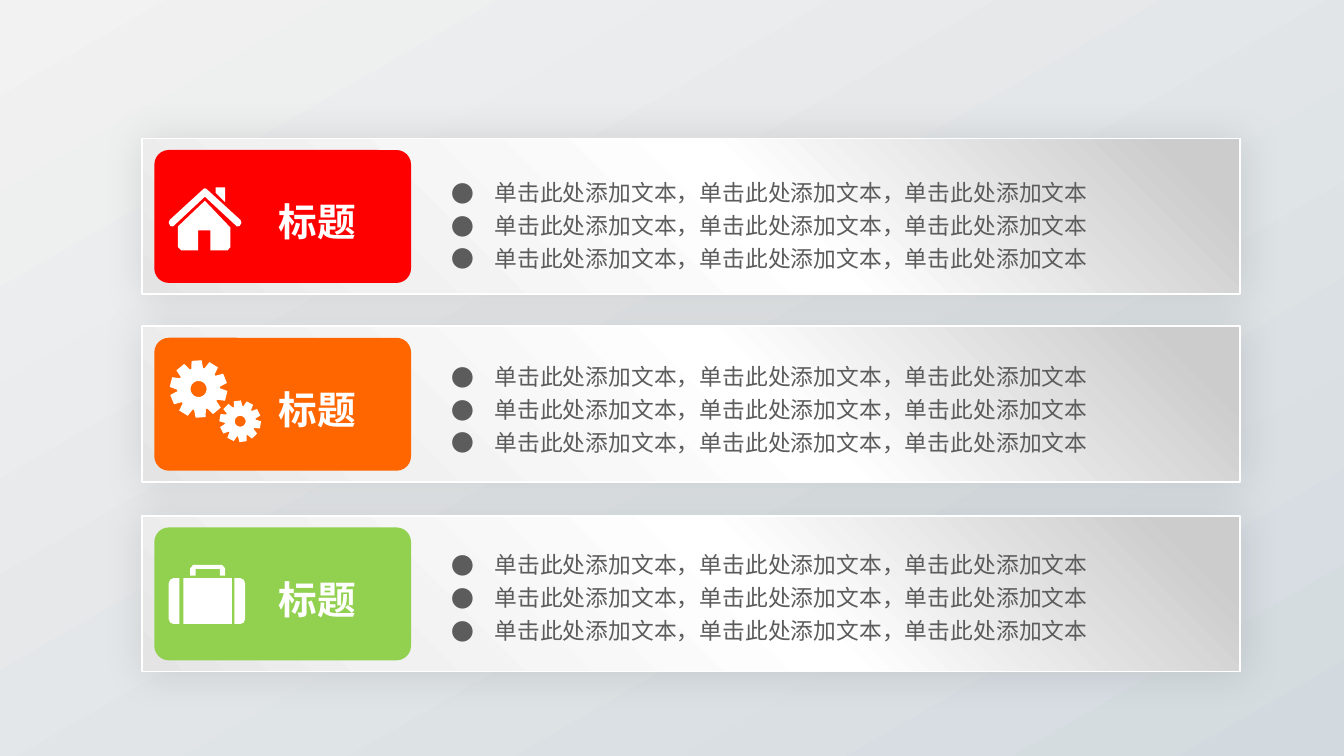
import math
from dataclasses import dataclass

import lxml.etree
import pptx
import pptx.dml.color
import pptx.enum.shapes
import pptx.enum.text
import pptx.oxml
import pptx.oxml.ns
import pptx.util

Pt = pptx.util.Pt
qn = pptx.oxml.ns.qn
rgb = pptx.dml.color.RGBColor.from_string


@dataclass(frozen=True)
class Theme:
    font: str = "Noto Sans CJK SC"
    white: str = "FFFFFF"
    body: str = "5C5C5C"
    red: str = "FF0000"
    orange: str = "FF6600"
    green: str = "92D050"
    shadow: str = "000000"
    background: tuple = ("F2F2F2", "D3DADF")
    card: tuple = ((6, "CCCCCC"), (43, "FFFFFF"), (80, "F1F1F1"), (100, "E4E4E4"))
    heading_size: float = 20.7
    body_size: float = 12.2


def child(parent, tag, **attributes):
    return lxml.etree.SubElement(parent, qn(tag), {k: str(v) for k, v in attributes.items()})


def write_text(tf, text, *, font, size, color, bold=False, align=None, bullet=None, indent=23):
    for i, line in enumerate(text.split("\n")):
        p = tf.paragraphs[0] if i == 0 else tf.add_paragraph()
        if bullet:
            pPr = p._p.get_or_add_pPr()
            pPr.set("marL", str(Pt(indent)))
            pPr.set("indent", str(-Pt(indent)))
            child(pPr, "a:buFont", typeface=font)
            child(pPr, "a:buChar", char=bullet)
        p.alignment = align
        p.line_spacing = 1.2
        p.space_before = p.space_after = Pt(0)
        r = p.add_run()
        r.text = line
        r.font.size = Pt(size)
        r.font.bold = bold
        r.font.color.rgb = rgb(color)
        r.font.name = font
        child(r._r.get_or_add_rPr(), "a:ea", typeface=font)


def gear(cx, cy, radius, hole, turn, teeth=10):
    step = 360 / teeth
    profile = ((-16, 0.74), (-10, 1), (10, 1), (16, 0.74))

    def polar(angle, r):
        a = math.radians(angle)
        return cx + r * math.cos(a), cy + r * math.sin(a)

    rim = [polar(turn + step * i + a, radius * k) for i in range(teeth) for a, k in profile]
    return [rim, [polar(15 * i, hole) for i in range(24)]]


def house():
    chimney = [(25.2, 2.9), (25.2, 0), (30.2, 0), (30.2, 7.9)]
    roof = [(18.6, 0.9), (19.4, 0.5), (20.3, 0.9), (38.5, 17.5), (39, 19), (38, 20.8),
            (36.5, 20.9), (19.4, 5), (2.4, 20.9), (0.9, 20.8), (0, 19), (0.5, 17.5)]
    walls = [(5, 20.9), (5, 32), (6.8, 33.8), (15.8, 33.8), (15.8, 23), (22.3, 23),
             (22.3, 33.8), (31.5, 33.8), (33.1, 32), (33.1, 21.6), (19.4, 7.2)]
    return [chimney, roof, walls]


def gears():
    return gear(16, 7.4, 15.5, 4.3, -94) + gear(38.3, 24.7, 11.2, 2.9, -98)


def suitcase(width=41):
    handle = [(11.5, 5.8), (11.5, 2), (13.2, 0), (28.6, 0), (30.3, 2),
              (30.3, 5.8), (27.4, 5.8), (27.4, 2.2), (14.4, 2.2), (14.4, 5.8)]
    side = [(5.8, 7.2), (5.8, 31.7), (2.5, 31.7), (0.8, 31), (0, 29), (0, 10), (0.8, 8), (2.5, 7.2)]
    trunk = [(7.9, 7.2), (33.8, 7.2), (33.8, 31.7), (7.9, 31.7)]
    return [handle, side, trunk, [(width - x, y) for x, y in side]]


class Deck:
    """Holds the theme and the current slide, and adds each kind of element."""

    def __init__(self, prs, theme):
        self.theme = theme
        self.s = prs.slides.add_slide(prs.slide_layouts[4])
        self.bodies = [sp for sp in self.s.placeholders if sp.placeholder_format.idx > 0]

    def background(self):
        fill = self.s.background.fill
        fill.gradient()
        fill.gradient_angle = 300
        for stop, color in zip(fill.gradient_stops, self.theme.background):
            stop.color.rgb = rgb(color)

    def box(self, x, y, w, h, corner):
        kind = pptx.enum.shapes.MSO_SHAPE.ROUNDED_RECTANGLE
        sp = self.s.shapes.add_shape(kind, Pt(x), Pt(y), Pt(w), Pt(h))
        sp.adjustments[0] = corner
        sp.shadow.inherit = False
        return sp

    def card(self, x, y, w, h):
        sp = self.box(x, y, w, h, 0)
        sp.line.color.rgb = rgb(self.theme.white)
        sp.line.width = Pt(1)
        spPr = sp._element.spPr
        grad = pptx.oxml.parse_xml(f'<a:gradFill {pptx.oxml.ns.nsdecls("a")} rotWithShape="1"/>')
        stops = child(grad, "a:gsLst")
        for position, color in self.theme.card:
            child(child(stops, "a:gs", pos=position * 1000), "a:srgbClr", val=color)
        child(grad, "a:lin", ang=135 * 60000, scaled=0)
        spPr.find(qn("a:prstGeom")).addnext(grad)
        glow = child(spPr.find(qn("a:effectLst")), "a:outerShdw", blurRad=Pt(22), dist=0, dir=0,
                     algn="ctr", rotWithShape=0)
        child(child(glow, "a:srgbClr", val=self.theme.shadow), "a:alpha", val=11000)

    def tab(self, x, y, w, h, color):
        sp = self.box(x, y, w, h, 0.109)
        sp.fill.solid()
        sp.fill.fore_color.rgb = rgb(color)
        sp.line.fill.background()

    def icon(self, x, y, contours):
        builder = None
        for contour in contours:
            start, *rest = [(Pt(x + px), Pt(y + py)) for px, py in contour]
            if builder is None:
                builder = self.s.shapes.build_freeform(*start)
            else:
                builder.move_to(*start)
            builder.add_line_segments(rest, close=True)
        sp = builder.convert_to_shape()
        sp.shadow.inherit = False
        sp.fill.solid()
        sp.fill.fore_color.rgb = rgb(self.theme.white)
        sp.line.fill.background()

    def frame(self, sp, margin_x, margin_y):
        tf = sp.text_frame
        tf.word_wrap = True
        tf.auto_size = pptx.enum.text.MSO_AUTO_SIZE.SHAPE_TO_FIT_TEXT
        tf.vertical_anchor = pptx.enum.text.MSO_ANCHOR.TOP
        tf.margin_left = tf.margin_right = Pt(margin_x)
        tf.margin_top = tf.margin_bottom = Pt(margin_y)
        return tf

    def heading(self, x, y, w, h, text):
        sp = self.s.shapes.add_textbox(Pt(x), Pt(y), Pt(w), Pt(h))
        write_text(self.frame(sp, 0, 0), text, font=self.theme.font, size=self.theme.heading_size,
                   color=self.theme.white, bold=True, align=pptx.enum.text.PP_ALIGN.CENTER)

    def bullets(self, x, y, w, h, text):
        sp = self.bodies.pop(0)
        sp.left, sp.top, sp.width, sp.height = Pt(x), Pt(y), Pt(w), Pt(h)
        self.s.shapes._spTree.append(sp._element)
        write_text(self.frame(sp, 7.2, 3.6), text, font=self.theme.font, size=self.theme.body_size,
                   color=self.theme.body, bullet="●")

    def remove_empty(self):
        for sp in list(self.s.placeholders):
            if not sp.text_frame.text:
                sp._element.getparent().remove(sp._element)


def main():
    prs = pptx.Presentation()
    prs.slide_width, prs.slide_height = Pt(720), Pt(405)
    theme = Theme()
    deck = Deck(prs, theme)
    deck.background()
    line = "，".join(["单击此处添加文本"] * 3)
    rows = (
        (74.2, 89.3, theme.red, house()),
        (174.8, 187.9, theme.orange, gears()),
        (276.4, 288.7, theme.green, suitcase()),
    )
    for top, list_top, color, contours in rows:
        tab_top = top + 6.2
        deck.card(76.2, top, 588.2, 83.4)
        deck.tab(82.7, tab_top, 137.5, 71.2, color)
        deck.icon(90.4, tab_top + 20, contours)
        deck.heading(128.9, tab_top + 20.9, 82.1, 37.4, "标题")
        deck.bullets(234.7, list_top, 385.9, 60.5, "\n".join([line] * 3))
    deck.remove_empty()
    prs.save("out.pptx")


if __name__ == "__main__":
    main()
